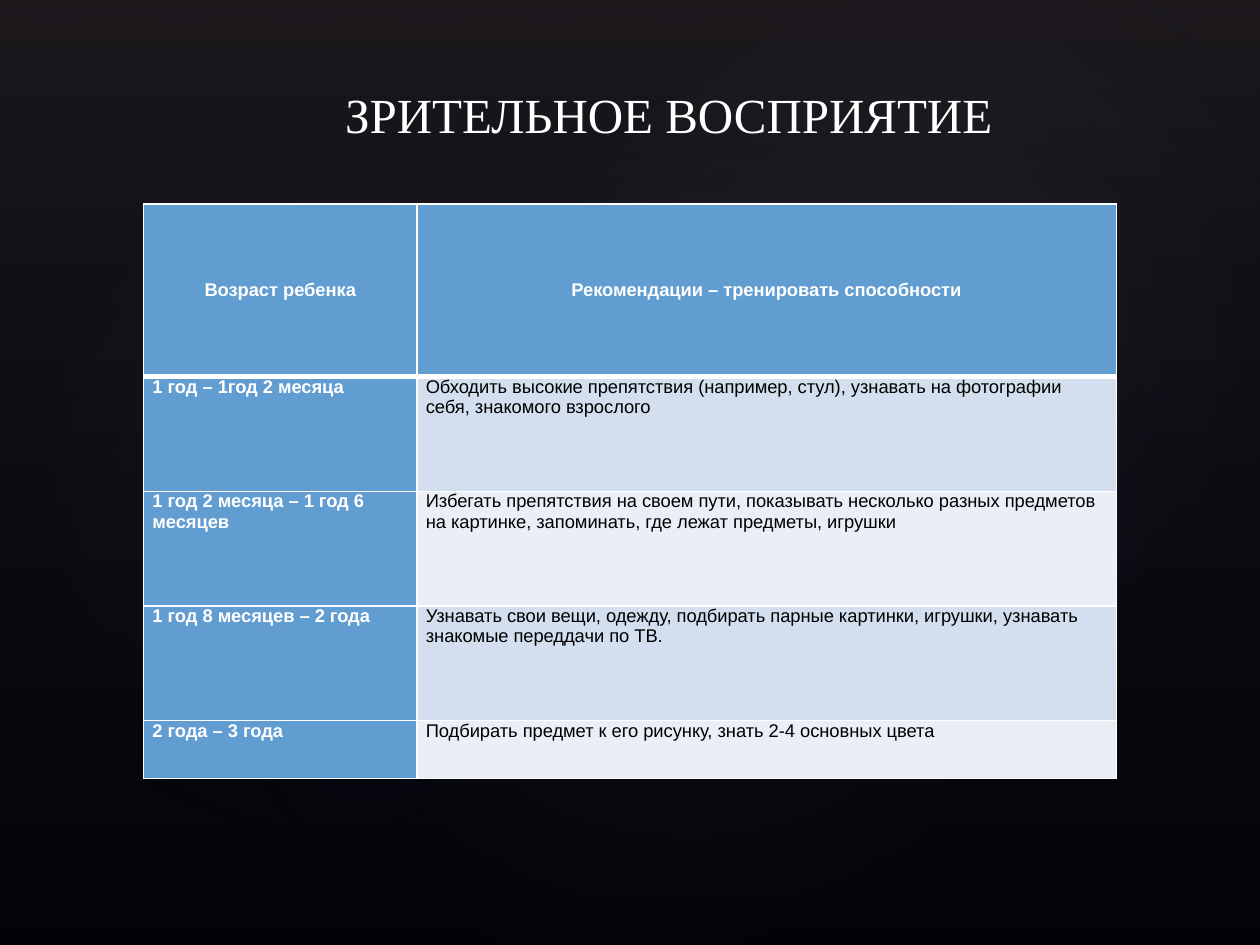
import pptx
import pptx.util
import pptx.dml.color
import pptx.enum.shapes
import pptx.enum.text
import pptx.oxml
import pptx.oxml.ns

Inches = pptx.util.Inches
Pt = pptx.util.Pt
RGBColor = pptx.dml.color.RGBColor
Shape = pptx.enum.shapes.MSO_SHAPE
Anchor = pptx.enum.text.MSO_ANCHOR
Align = pptx.enum.text.PP_ALIGN

BLACK = RGBColor(0x00, 0x00, 0x00)
WHITE = RGBColor(0xFF, 0xFF, 0xFF)
BLUE = RGBColor(0x62, 0x9D, 0xD1)
BANDS = RGBColor(0xD3, 0xDF, 0xEE), RGBColor(0xEA, 0xEF, 0xF7)
PLUM = RGBColor(0x50, 0x46, 0x52)
NAVY = RGBColor(0x24, 0x28, 0x52)
MAUVE = RGBColor(0xC4, 0xBC, 0xC6)

LINEAR = '<a:lin ang="5400000" scaled="0"/>'
RADIAL = ('<a:path path="circle"><a:fillToRect l="50000" t="50000" '
          'r="50000" b="50000"/></a:path>')

# left, top, width, height, rotation, opacity at the centre
GLOWS = [
    (1.5, 1.14, 7.92, 6.24, 328.7, 7),
    (-0.3, 1.28, 6.06, 4.9, 294.3, 8),
    (3.58, 0.13, 7.09, 5.2, 328.7, 8),
]
COLS = [2.17, 5.55]
HEIGHTS = [1.37, 0.91, 0.91, 0.91, 0.46]
ROWS = [
    ("Возраст ребенка", "Рекомендации – тренировать способности"),
    ("1 год – 1год 2 месяца",
     "Обходить высокие препятствия (например, стул), узнавать на фотографии "
     "себя, знакомого взрослого"),
    ("1 год 2 месяца – 1 год 6 месяцев",
     "Избегать препятствия на своем пути, показывать несколько разных "
     "предметов на картинке, запоминать, где лежат предметы, игрушки"),
    ("1 год 8 месяцев – 2 года",
     "Узнавать свои вещи, одежду, подбирать парные картинки, игрушки, "
     "узнавать знакомые переддачи по ТВ."),
    ("2 года – 3 года",
     "Подбирать предмет к его рисунку, знать 2-4 основных цвета"),
]


class Deck:
    def __init__(self):
        self.show = pptx.Presentation()
        self.show.slide_width = Inches(10)
        self.show.slide_height = Inches(7.5)
        self.slide = self.show.slides.add_slide(self.show.slide_layouts[6])
        self.head_font = "Times New Roman"
        self.body_font = "Arial"

    def back(self, color):
        fill = self.slide.background.fill
        fill.solid()
        fill.fore_color.rgb = color

    def wash(self, kind, box, stops, path, turn=0):
        """Add a shape filled with a gradient of (place, colour, opacity)."""
        shape = self.slide.shapes.add_shape(kind, *map(Inches, box))
        shape.shadow.inherit = False
        shape.line.fill.background()
        shape.rotation = turn
        marks = "".join(
            f'<a:gs pos="{place * 1000}"><a:srgbClr val="{color}">'
            f'<a:alpha val="{alpha * 1000}"/></a:srgbClr></a:gs>'
            for place, color, alpha in stops)
        fill = pptx.oxml.parse_xml(
            f'<a:gradFill {pptx.oxml.ns.nsdecls("a")} rotWithShape="1">'
            f'<a:gsLst>{marks}</a:gsLst>{path}</a:gradFill>')
        shape.fill.background()
        props = shape.element.spPr
        props.replace(props.find(pptx.oxml.ns.qn("a:noFill")), fill)

    def style(self, para, font, size, color, bold=False):
        for run in para.runs:
            run.font.name = font
            run.font.size = Pt(size)
            run.font.bold = bold
            run.font.color.rgb = color

    def title(self, box, text):
        frame = self.slide.shapes.add_textbox(*map(Inches, box)).text_frame
        frame.word_wrap = True
        frame.margin_top = Inches(0.07)
        frame.text = text
        self.style(frame.paragraphs[0], self.head_font, 28, WHITE)

    def edge(self, cell, head):
        """Draw white cell borders, with a thick rule below the header."""
        props = cell._tc.get_or_add_tcPr()
        sides = {"L": 1, "R": 1, "T": 1, "B": 1}
        if head:
            sides["B"] = 3
        for side, width in sides.items():
            props.append(pptx.oxml.parse_xml(
                f'<a:ln{side} {pptx.oxml.ns.nsdecls("a")} w="{Pt(width)}">'
                f'<a:solidFill><a:srgbClr val="{WHITE}"/></a:solidFill>'
                f'</a:ln{side}>'))

    def cell(self, cell, text, head, fill, color, bold):
        self.edge(cell, head)
        cell.fill.solid()
        cell.fill.fore_color.rgb = fill
        cell.margin_left = cell.margin_right = Inches(0.07)
        cell.margin_top = cell.margin_bottom = 0
        cell.vertical_anchor = Anchor.MIDDLE if head else Anchor.TOP
        cell.text = text
        para = cell.text_frame.paragraphs[0]
        para.alignment = Align.CENTER if head else Align.LEFT
        self.style(para, self.body_font, 10.5, color, bold)

    def table(self, left, top, cols, heights, rows):
        grid = self.slide.shapes.add_table(
            len(rows), len(cols), Inches(left), Inches(top),
            Inches(sum(cols)), Inches(sum(heights))).table
        for col, width in zip(grid.columns, cols):
            col.width = Inches(width)
        for r, (height, texts) in enumerate(zip(heights, rows)):
            grid.rows[r].height = Inches(height)
            for c, text in enumerate(texts):
                strong = r == 0 or c == 0
                fill = BLUE if strong else BANDS[(r - 1) % 2]
                color = WHITE if strong else BLACK
                self.cell(grid.cell(r, c), text, r == 0, fill, color, strong)

    def save(self):
        self.show.save("out.pptx")


def main():
    deck = Deck()
    deck.back(BLACK)
    deck.wash(Shape.RECTANGLE, (0, 0, 10, 7.5),
              [(0, PLUM, 36), (100, NAVY, 10)], LINEAR)
    for *box, turn, alpha in GLOWS:
        deck.wash(Shape.OVAL, box, [(0, MAUVE, alpha), (58, NAVY, 0)],
                  RADIAL, turn)
    deck.table(1.14, 1.62, COLS, HEIGHTS, ROWS)
    deck.title((2.64, 0.6, 5.41, 0.88), "ЗРИТЕЛЬНОЕ ВОСПРИЯТИЕ")
    deck.save()


if __name__ == "__main__":
    main()
